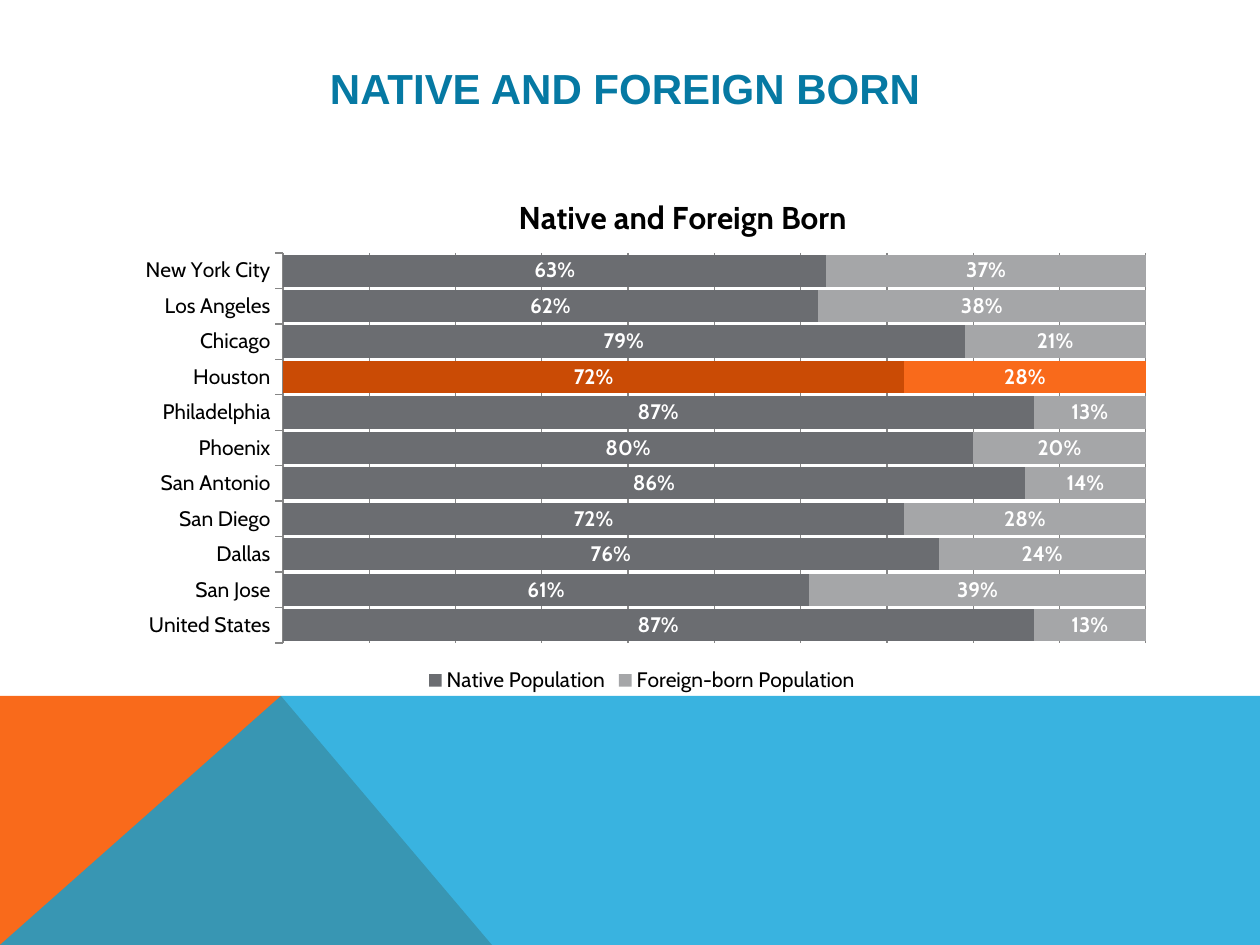
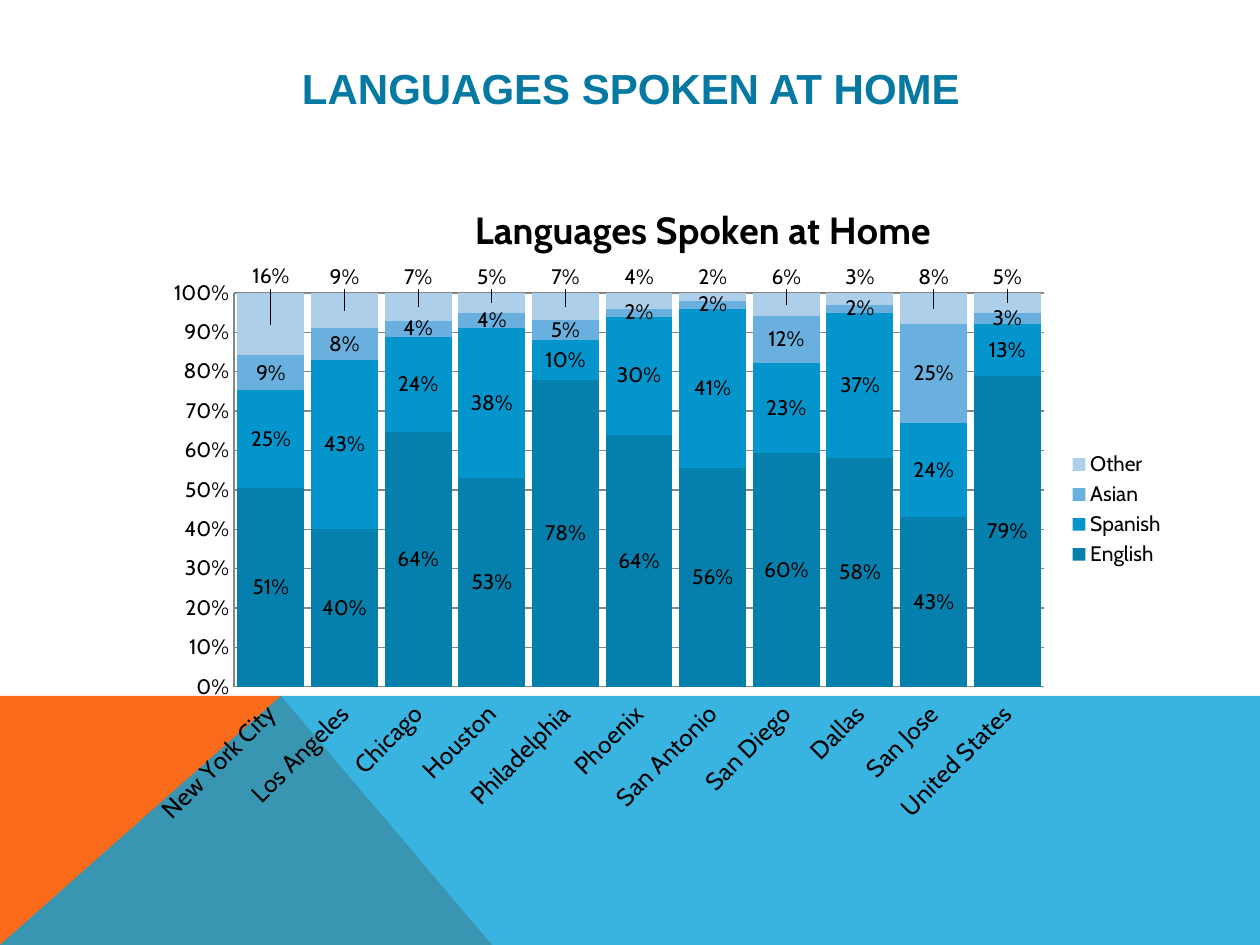
from lxml import etree
from pptx import Presentation
from pptx.chart.data import CategoryChartData
from pptx.dml.color import RGBColor
from pptx.enum.chart import (XL_CHART_TYPE, XL_LABEL_POSITION, XL_LEGEND_POSITION,
                             XL_TICK_LABEL_POSITION, XL_TICK_MARK)
from pptx.enum.text import MSO_ANCHOR, PP_ALIGN
from pptx.oxml.ns import qn
from pptx.util import Pt

BARS, COLUMNS = XL_CHART_TYPE.BAR_STACKED_100, XL_CHART_TYPE.COLUMN_STACKED_100
BOTTOM, RIGHT = XL_LEGEND_POSITION.BOTTOM, XL_LEGEND_POSITION.RIGHT
MIDDLE, CENTER = MSO_ANCHOR.MIDDLE, PP_ALIGN.CENTER
INSIDE = XL_LABEL_POSITION.CENTER
LOW = XL_TICK_LABEL_POSITION.LOW
NONE, OUT = XL_TICK_MARK.NONE, XL_TICK_MARK.OUTSIDE

PX = 914400 / 126
FACE = "Cabin"
BLACK, WHITE, GRID, TITLE = "000000", "FFFFFF", "868686", "0679A3"
ORANGE, RUST, BLUE = "F96A1B", "CA4B05", "08A1D9"

BANDS = [
    (ORANGE, 100, [(0, 945), (0, 696), (281, 696), (492, 945)]),
    (BLUE, 80, [(0, 945), (281, 696), (1260, 696), (1260, 945)]),
]
CITIES = ["New York City", "Los Angeles", "Chicago", "Houston", "Philadelphia",
          "Phoenix", "San Antonio", "San Diego", "Dallas", "San Jose", "United States"]
NATIVE = [63, 62, 79, 72, 87, 80, 86, 72, 76, 61, 87]
BORN = [
    ("Native Population", "6B6D71", NATIVE),
    ("Foreign-born Population", "A5A6A8", [100 - n for n in NATIVE]),
]
SPOKEN = [
    ("English", "057FAB", [51, 40, 64, 53, 78, 64, 56, 60, 58, 43, 79]),
    ("Spanish", "0595CD", [25, 43, 24, 38, 10, 30, 41, 23, 37, 24, 13]),
    ("Asian", "6AB0DE", [9, 8, 4, 4, 5, 2, 2, 12, 2, 25, 3]),
    ("Other", "AECFEA", [16, 9, 7, 5, 7, 4, 2, 6, 3, 8, 5]),
]
# heading, chart title, kind, series, chart box, plot box, title spot, title size
SLIDES = [
    ("NATIVE AND FOREIGN BORN ", "Native and Foreign Born", BARS, BORN,
     (116, 168, 1052, 530), (283, 253, 863, 390), (513, 190), 18),
    ("LANGUAGES SPOKEN AT HOME", "Languages Spoken at Home", COLUMNS, SPOKEN,
     (126, 179, 1052, 661), (234, 293, 810, 394), (468, 196), 21.6),
]


def color(text):
    return RGBColor.from_string(text)


def place(node, index, **marks):
    """Give a chart part a manual layout, as its child number index."""
    for old in node.findall(qn("c:layout")):
        node.remove(old)
    layout = etree.Element(qn("c:layout"))
    manual = etree.SubElement(layout, qn("c:manualLayout"))
    for key, value in marks.items():
        text = value if isinstance(value, str) else f"{value:.4f}"
        etree.SubElement(manual, qn("c:" + key)).set("val", text)
    node.insert(index, layout)


prs = Presentation()
prs.slide_width, prs.slide_height = round(1260 * PX), round(945 * PX)

for heading, name, kind, rows, box, plot_box, spot, size in SLIDES:
    slide = prs.slides.add_slide(prs.slide_layouts[6])
    bars = kind == BARS

    for fill, alpha, points in BANDS:
        pen = slide.shapes.build_freeform(*points[0], scale=PX)
        pen.add_line_segments(points[1:], close=True)
        band = pen.convert_to_shape()
        band.shadow.inherit = False
        band.line.fill.background()
        band.fill.solid()
        band.fill.fore_color.rgb = color(fill)
        if alpha < 100:
            tint = band._element.spPr.find(".//" + qn("a:srgbClr"))
            etree.SubElement(tint, qn("a:alpha")).set("val", str(alpha * 1000))

    head = slide.shapes.add_textbox(*[round(n * PX) for n in (113, 50, 1036, 76)])
    frame = head.text_frame
    frame.word_wrap = True
    frame.vertical_anchor = MIDDLE
    para = frame.paragraphs[0]
    para.text = heading
    para.alignment = CENTER
    para.font.name, para.font.size, para.font.bold = "Arial", Pt(24), True
    para.font.color.rgb = color(TITLE)

    data = CategoryChartData(number_format="0%")
    step = -1 if bars else 1
    data.categories = CITIES[::step]
    for label, _, values in rows:
        data.add_series(label, [v / 100 for v in values[::step]])
    chart = slide.shapes.add_chart(kind, *[round(n * PX) for n in box], data).chart
    chart.font.name, chart.font.size = FACE, Pt(12)
    chart.font.color.rgb = color(BLACK)

    left, top, wide, high = box
    chart.has_title = True
    para = chart.chart_title.text_frame.paragraphs[0]
    para.text = name
    para.font.name, para.font.size, para.font.bold = FACE, Pt(size), True
    para.font.color.rgb = color(BLACK)
    place(chart.chart_title._element, 1, xMode="edge", yMode="edge",
          x=(spot[0] - left) / wide, y=(spot[1] - top) / high)
    area = chart._chartSpace.find(".//" + qn("c:plotArea"))
    place(area, 0, layoutTarget="inner", xMode="edge", yMode="edge",
          x=(plot_box[0] - left) / wide, y=(plot_box[1] - top) / high,
          w=plot_box[2] / wide, h=plot_box[3] / high)

    chart.has_legend = True
    chart.legend.position = BOTTOM if bars else RIGHT
    chart.legend.include_in_layout = False
    chart.legend.font.name, chart.legend.font.size = FACE, Pt(12)

    cat, val = chart.category_axis, chart.value_axis
    cat.major_tick_mark = OUT if bars else NONE
    cat.tick_label_position = LOW
    cat.tick_labels.font.size = Pt(12 if bars else 14)
    val.visible = not bars
    val.major_tick_mark = NONE
    val.minimum_scale, val.maximum_scale, val.major_unit = 0, 1, 0.1
    val.tick_labels.font.size = Pt(12)
    val.tick_labels.number_format = "0%"
    val.tick_labels.number_format_is_linked = False
    for line in (val.major_gridlines.format.line, cat.format.line, val.format.line):
        line.color.rgb = color(GRID)
        line.width = Pt(0.75)
    if not bars:
        cat._element.find(".//" + qn("a:bodyPr")).set("rot", "-2700000")

    plot = chart.plots[0]
    plot.gap_width, plot.overlap = 10, 100
    plot.vary_by_categories = False
    for series, (_, fill, _) in zip(plot.series, rows):
        series.format.fill.solid()
        series.format.fill.fore_color.rgb = color(fill)
        labels = series.data_labels
        labels.show_value = True
        labels.number_format, labels.number_format_is_linked = "0%", False
        labels.position = INSIDE
        labels.font.name, labels.font.size = FACE, Pt(12)
        labels.font.bold = bars
        labels.font.color.rgb = color(WHITE if bars else BLACK)

    if bars:
        spot_at = CITIES[::step].index("Houston")
        for series, fill in zip(plot.series, (RUST, ORANGE)):
            mark = series.points[spot_at].format.fill
            mark.solid()
            mark.fore_color.rgb = color(fill)
    else:
        # The labels of the top series stand 16 px above the columns.
        other = plot.series[-1]
        for i, value in enumerate(other.values):
            label = other.points[i].data_label
            label.font.name, label.font.size = FACE, Pt(12)
            label.position = INSIDE
        for node, value in zip(other._element.iter(qn("c:dLbl")), other.values):
            place(node, 1, x=0.0, y=-(16 + value * plot_box[3] / 2) / high)
            form = etree.Element(qn("c:numFmt"), formatCode="0%", sourceLinked="0")
            node.insert(2, form)

prs.save("out.pptx")
